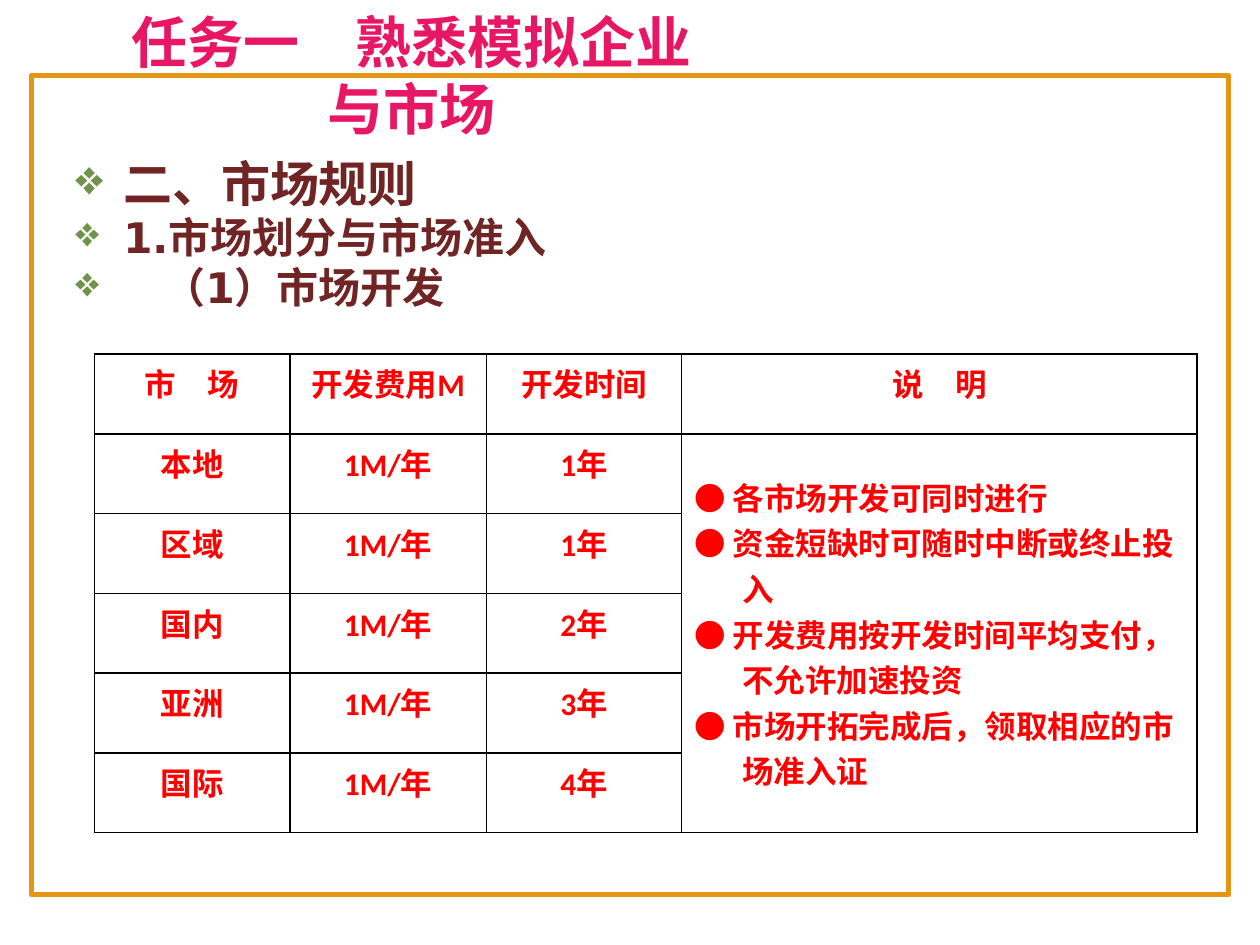
from dataclasses import dataclass

from lxml.etree import SubElement
from pptx import Presentation
from pptx.dml.color import RGBColor
from pptx.enum.shapes import MSO_SHAPE as Shape
from pptx.enum.text import MSO_ANCHOR as Anchor, PP_ALIGN as Align
from pptx.oxml.ns import qn
from pptx.util import Inches, Pt


@dataclass(frozen=True)
class Theme:
    frame: str = "E49514"
    title: str = "E81766"
    outline: str = "702424"
    bullet: str = "6E9349"
    table: str = "FF0000"
    border: str = "000000"
    title_size: int = 32
    heading_size: int = 28
    point_size: int = 24
    table_size: int = 18
    cjk: str = "Noto Sans CJK SC"


THEME = Theme()


def add_text(frame, text, *, size, color, font, east_asian=THEME.cjk,
             align=Align.LEFT, margin=0, hanging=0, bullet=None,
             line_spacing=None, space_before=0):
    """Fill the empty first paragraph of a frame, or append another one."""
    first = not frame.paragraphs[0].runs
    paragraph = frame.paragraphs[0] if first else frame.add_paragraph()
    props = paragraph._p.get_or_add_pPr()
    props.set("marL", str(Inches(margin)))
    props.set("indent", str(Inches(-hanging)))
    if bullet:
        bullet_color = SubElement(props, qn("a:buClr"))
        SubElement(bullet_color, qn("a:srgbClr"), val=THEME.bullet)
        SubElement(props, qn("a:buChar"), char=bullet)
    paragraph.alignment = align
    if line_spacing:
        paragraph.line_spacing = line_spacing
    if not first:
        paragraph.space_before = Pt(space_before)
    run = paragraph.add_run()
    run.text = text
    run.font.size = Pt(size)
    run.font.bold = True
    run.font.name = font
    run.font.color.rgb = RGBColor.from_string(color)
    SubElement(run._r.get_or_add_rPr(), qn("a:ea"), typeface=east_asian)


def add_borders(cell):
    props = cell._tc.get_or_add_tcPr()
    for side in ("a:lnL", "a:lnR", "a:lnT", "a:lnB"):
        line = SubElement(props, qn(side), w=str(Pt(1)))
        fill = SubElement(line, qn("a:solidFill"))
        SubElement(fill, qn("a:srgbClr"), val=THEME.border)


prs = Presentation()
prs.slide_width, prs.slide_height = Inches(10), Inches(7.5)
slide = prs.slides.add_slide(prs.slide_layouts[6])

# Slide frame
border = slide.shapes.add_shape(
    Shape.RECTANGLE, Inches(0.25), Inches(0.6), Inches(9.5), Inches(6.5))
border.shadow.inherit = False
border.fill.background()
border.line.color.rgb = RGBColor.from_string(THEME.frame)
border.line.width = Pt(3)

# Section outline
outline = slide.shapes.add_textbox(
    Inches(0.5), Inches(1.25), Inches(4.42), Inches(5.35)).text_frame
outline.word_wrap = True
outline_points = [
    ("二、市场规则", THEME.heading_size, THEME.cjk, 0.38),
    ("1.市场划分与市场准入", THEME.point_size, "DejaVu Sans", 0.38),
    ("（1）市场开发", THEME.point_size, "DejaVu Sans", 0.7),
]
for text, size, font, margin in outline_points:
    add_text(outline, text, size=size, color=THEME.outline, font=font,
             margin=margin, hanging=margin, bullet="❖",
             line_spacing=0.82, space_before=size * 0.2)

# Market table
market_rows = [
    ("市　场", "开发费用M", "开发时间", "说　明"),
    ("本地", "1M/年", "1年"),
    ("区域", "1M/年", "1年"),
    ("国内", "1M/年", "2年"),
    ("亚洲", "1M/年", "3年"),
    ("国际", "1M/年", "4年"),
]
notes = [
    "● 各市场开发可同时进行",
    "● 资金短缺时可随时中断或终止投入",
    "● 开发费用按开发时间平均支付，不允许加速投资",
    "● 市场开拓完成后，领取相应的市场准入证",
]
column_widths = [1.55, 1.56, 1.55, 4.09]
markets = slide.shapes.add_table(
    len(market_rows), len(column_widths),
    Inches(0.75), Inches(2.81), Inches(8.75), Inches(3.8)).table
markets.horz_banding = False
for column, width in zip(markets.columns, column_widths):
    column.width = Inches(width)
for cell in markets.iter_cells():
    add_borders(cell)
    cell.fill.background()

table_format = dict(size=THEME.table_size, color=THEME.table, font="Calibri")
for row_index, row in enumerate(market_rows):
    for column_index, text in enumerate(row):
        add_text(markets.cell(row_index, column_index).text_frame, text,
                 align=Align.CENTER, **table_format)

# Notes beside the five markets
notes_cell = markets.cell(1, 3)
notes_cell.merge(markets.cell(5, 3))
notes_cell.vertical_anchor = Anchor.MIDDLE
for note in notes:
    add_text(notes_cell.text_frame, note, margin=0.38, hanging=0.38,
             **table_format)

# Title
title = slide.shapes.add_textbox(
    Inches(0.75), Inches(0.28), Inches(5.04), Inches(0.63)).text_frame
title.word_wrap = False
title.vertical_anchor = Anchor.MIDDLE
add_text(title, "任务一　熟悉模拟企业与市场", size=THEME.title_size,
         color=THEME.title, font="Noto Sans CJK JP",
         east_asian="Noto Sans CJK JP", align=Align.CENTER)

prs.save("out.pptx")
